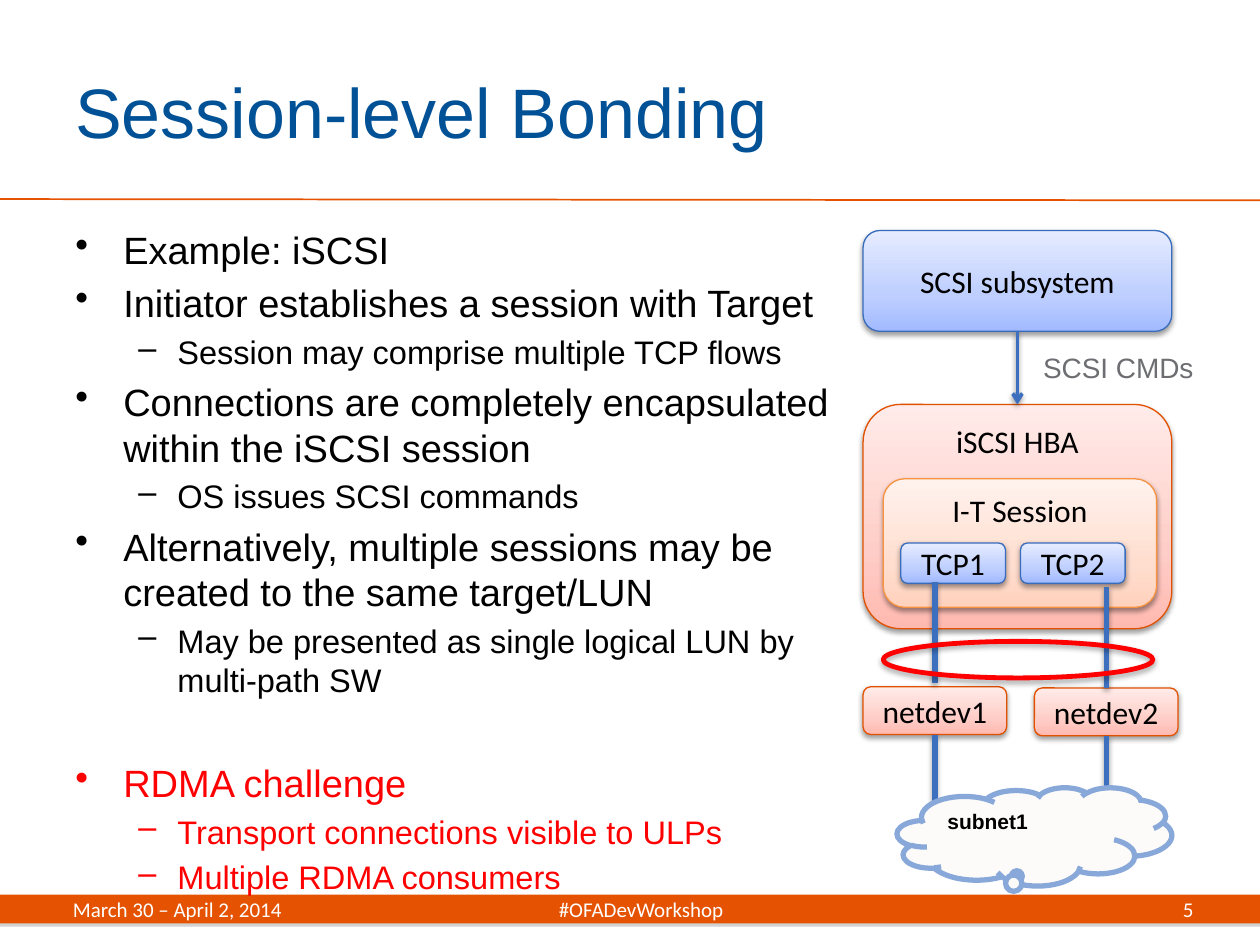
from lxml import etree
from pptx import Presentation
from pptx.dml.color import RGBColor
from pptx.enum.shapes import MSO_CONNECTOR, MSO_SHAPE
from pptx.enum.text import MSO_ANCHOR, PP_ALIGN
from pptx.oxml.ns import qn
from pptx.util import Pt

PX = 9144  # 100 px to the inch
TOP, MIDDLE = MSO_ANCHOR.TOP, MSO_ANCHOR.MIDDLE
LEFT, CENTER, RIGHT = PP_ALIGN.LEFT, PP_ALIGN.CENTER, PP_ALIGN.RIGHT
ROUNDED, RECTANGLE = MSO_SHAPE.ROUNDED_RECTANGLE, MSO_SHAPE.RECTANGLE
ELLIPSE, CLOUD = MSO_SHAPE.OVAL, MSO_SHAPE.CLOUD_CALLOUT
STRAIGHT = MSO_CONNECTOR.STRAIGHT
BOTTOM_SIDE, TOP_SIDE = 2, 0

ORANGE, RED, BLACK, WHITE, WIRE = "E55302", "FF0000", "000000", "FFFFFF", "3C6FBD"

# Content: (level, text, colour)
POINTS = [
    (0, "Example: iSCSI", BLACK),
    (0, "Initiator establishes a session with Target", BLACK),
    (1, "Session may comprise multiple TCP flows", BLACK),
    (0, "Connections are completely encapsulated within the iSCSI session", BLACK),
    (1, "OS issues SCSI commands", BLACK),
    (0, "Alternatively, multiple sessions may be created to the same target/LUN", BLACK),
    (1, "May be presented as single logical LUN by multi-path SW", BLACK),
    (0, "RDMA challenge", RED),
    (1, "Transport connections visible to ULPs", RED),
    (1, "Multiple RDMA consumers", RED),
]
# Level: bullet, left margin px, hanging px, size pt, space before pt
LEVELS = [("•", 38, 38, 21.7, 4.4), ("–", 81, 31, 18.6, 3.7)]
CHALLENGE_GAP = 34.8

# Palette: gradient from bottom to top, then outline
BLUE_BOX = ("A2BAFF", "BDCEFF", "E6ECFF", "386CBC")
RED_BOX = ("FFB9B0", "FFCDC7", "FFECEA", "E25100")
PEACH_BOX = ("FFD2BD", "FFDED0", "FFF2ED", "F69240")
GRADIENT_STOPS = (0, 35, 100)
BOXES = [
    ("SCSI subsystem", (685, 183, 245, 80), BLUE_BOX, MIDDLE),
    ("iSCSI HBA", (685, 321, 245, 178), RED_BOX, TOP),
    ("I-T Session", (701, 380, 217, 102), PEACH_BOX, TOP),
    ("TCP1", (715, 431, 83, 32), BLUE_BOX, MIDDLE),
    ("TCP2", (810, 431, 83, 32), BLUE_BOX, MIDDLE),
    ("netdev1", (685, 545, 114, 38), RED_BOX, MIDDLE),
    ("netdev2", (821, 546, 114, 38), RED_BOX, MIDDLE),
]
# x, top, bottom, width pt, box joined at top, box joined at bottom
WIRES = [
    (807, 263, 321, 2, "SCSI subsystem", "iSCSI HBA"),
    (742, 583, 644, 3, "netdev1", None),
    (878, 584, 644, 3, "netdev2", None),
    (742, 462, 542, 3, None, None),
    (878, 466, 546, 3, None, "netdev2"),
]

prs = Presentation()
prs.slide_width, prs.slide_height = 1000 * PX, 750 * PX
slide = prs.slides.add_slide(prs.slide_layouts[6])
shapes = slide.shapes


def rgb(value):
    return RGBColor.from_string(value)


def scaled(numbers):
    return [n * PX for n in numbers]


def element(parent, tag, **attributes):
    return etree.SubElement(parent, qn(tag), {k: str(v) for k, v in attributes.items()})


def add_shadow(shape, color=BLACK, alpha=38, blur=3.1, distance=1.6):
    """Shadow straight down, in points and percent."""
    effects = element(shape._element.spPr, "a:effectLst")
    outer = element(effects, "a:outerShdw", blurRad=Pt(blur), dist=Pt(distance),
                    dir=5400000, algn="ctr", rotWithShape=0)
    element(element(outer, "a:srgbClr", val=color), "a:alpha", val=alpha * 1000)


def style_font(paragraph, size, color, name="Arial", bold=False):
    font = paragraph.font
    font.size, font.name, font.bold = Pt(size), name, bold
    font.color.rgb = rgb(color)


def write(shape, text, size, color, name="Arial", align=LEFT, anchor=TOP, bold=False):
    frame = shape.text_frame
    frame.vertical_anchor = anchor
    paragraph = frame.paragraphs[0]
    paragraph.text = text
    paragraph.alignment = align
    style_font(paragraph, size, color, name, bold)


def add_text(box, *args, wrap=True, **options):
    label = shapes.add_textbox(*scaled(box))
    label.text_frame.word_wrap = wrap
    write(label, *args, **options)
    return label


def add_shape(kind, box, fill=None, line=None, width=1):
    shape = shapes.add_shape(kind, *scaled(box))
    if fill:
        shape.fill.solid()
        shape.fill.fore_color.rgb = rgb(fill)
    else:
        shape.fill.background()
    if line:
        shape.line.color.rgb = rgb(line)
        shape.line.width = Pt(width)
    else:
        shape.line.fill.background()
    return shape


def add_line(start, end, color, width):
    line = shapes.add_connector(STRAIGHT, *scaled(start + end))
    line.line.color.rgb = rgb(color)
    line.line.width = Pt(width)
    return line


def add_gradient(shape, colors):
    shape.fill.gradient()
    shape.fill.gradient_angle = 90
    stops = shape._element.spPr.find(".//" + qn("a:gsLst"))
    for stop in list(stops):
        stops.remove(stop)
    for position, color in zip(GRADIENT_STOPS, colors):
        element(element(stops, "a:gs", pos=position * 1000), "a:srgbClr", val=color)


# Footer bar, title rule and title
footer_bar = add_shape(RECTANGLE, (0, 710, 1000, 23), ORANGE)
add_shadow(footer_bar, "808080", 35, 0, 1.8)
title_rule = add_line((0, 158), (1000, 159), ORANGE, 1)
element(title_rule._element.spPr, "a:effectLst")
add_text((50, 25, 817, 125), "Session-level Bonding", 40, "005195", anchor=MIDDLE)

# Bulleted points
body = shapes.add_textbox(*scaled((50, 175, 619, 503))).text_frame
body.word_wrap = True
for index, (level, text, color) in enumerate(POINTS):
    bullet, margin, hanging, size, gap = LEVELS[level]
    point = body.add_paragraph() if index else body.paragraphs[0]
    point.text = text
    point.level = level
    if index:
        point.space_before = Pt(CHALLENGE_GAP if text == "RDMA challenge" else gap)
    properties = point._p.get_or_add_pPr()
    properties.set("marL", str(margin * PX))
    properties.set("indent", str(-hanging * PX))
    element(properties, "a:buChar", char=bullet)
    style_font(point, size, color)

# Footer text with a centred tab, and page number
footer = add_text((48, 710, 905, 23), "March 30 – April 2, 2014\t#OFADevWorkshop",
                  12, WHITE, "Calibri", anchor=MIDDLE)
footer_properties = footer.text_frame.paragraphs[0]._p.get_or_add_pPr()
tabs = etree.Element(qn("a:tabLst"))
element(tabs, "a:tab", pos=451 * PX, algn="ctr")
footer_properties.insert(0, tabs)
add_text((838, 710, 119, 23), "5", 12, WHITE, "Calibri", align=RIGHT, anchor=MIDDLE)

# Stack of boxes
boxes = {}
for name, place, (*gradient, outline), anchor in BOXES:
    box = boxes[name] = add_shape(ROUNDED, place, line=outline, width=0.75)
    add_gradient(box, gradient)
    add_shadow(box)
    write(box, name, 18, BLACK, "Calibri", CENTER, anchor)

# Wires between the boxes; the first carries an arrowhead
for index, (x, top, bottom, width, upper, lower) in enumerate(WIRES):
    wire = add_line((x, top), (x, bottom), WIRE, width)
    if upper:
        wire.begin_connect(boxes[upper], BOTTOM_SIDE)
    if lower:
        wire.end_connect(boxes[lower], TOP_SIDE)
    if index == 0:
        element(wire.line._get_or_add_ln(), "a:tailEnd", type="arrow")
    add_shadow(wire)

# Ring around the flows, command label and subnet cloud
ring = add_shape(ELLIPSE, (701, 509, 214, 29), line=RED, width=2.75)
add_shadow(ring, alpha=35, distance=1.8)
add_text((818, 273, 141, 37), "SCSI CMDs", 16, "6D6E71", wrap=False)
cloud = add_shape(CLOUD, (712, 625, 218, 78), "FCFBF9", "88A8D9", 3)
cloud.shadow.inherit = False
cloud.adjustments[0], cloud.adjustments[1] = -0.061, 0.383
write(cloud, "subnet1", 12, BLACK, bold=True)

prs.save("out.pptx")
